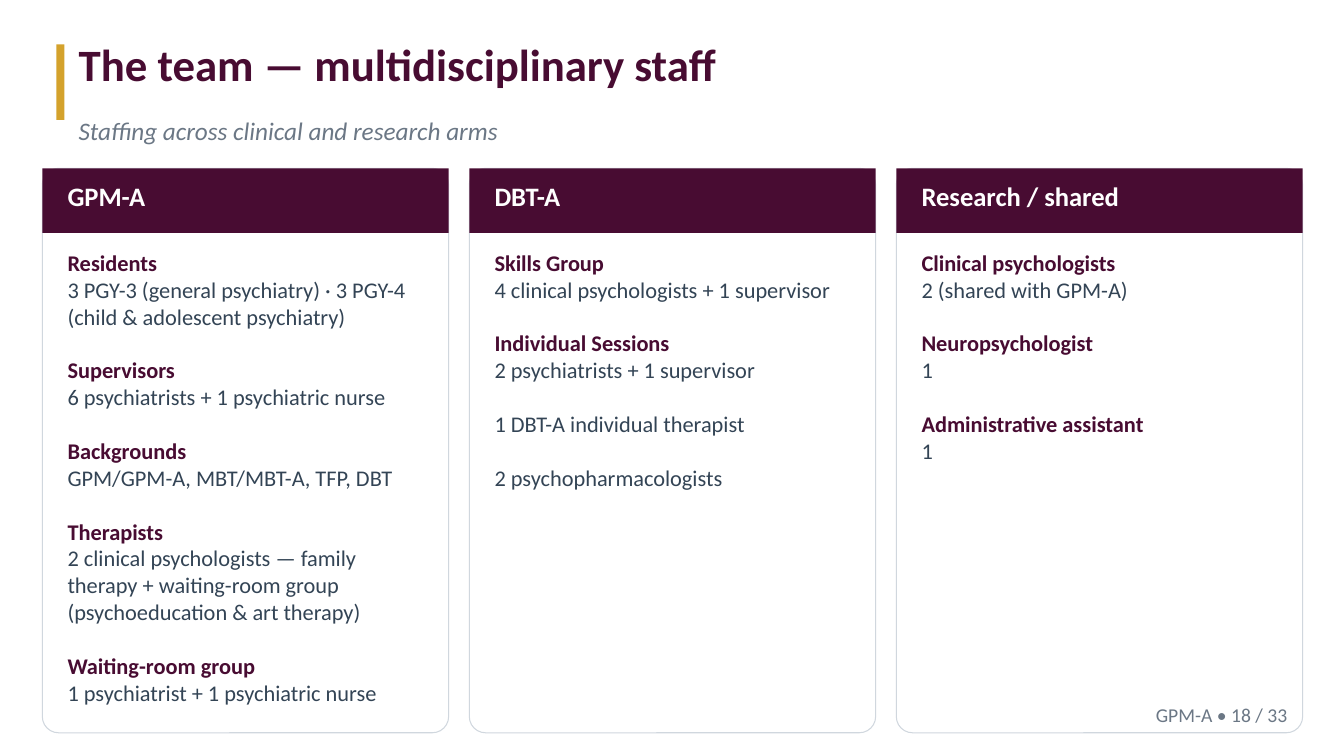
from pptx import Presentation
from pptx import util as u
from pptx.dml.color import RGBColor
from pptx.enum import shapes, text

PLUM = RGBColor(0x48, 0x0C, 0x32)
GOLD = RGBColor(0xD4, 0xA2, 0x2C)
GRAY = RGBColor(0x6B, 0x77, 0x85)
SLATE = RGBColor(0x33, 0x44, 0x55)
RULE = RGBColor(0xD0, 0xD7, 0xDE)
WHITE = RGBColor(0xFF, 0xFF, 0xFF)

WIDE, HIGH = 13.33, 7.5
SIDE, TOP = 0.42, 1.67
CARD, TALL, GAP = 4.03, 5.6, 0.205
PAD, BAND = 0.25, 0.64

TEAMS = [
    ("GPM-A", [
        ("Residents", "3 PGY-3 (general psychiatry) · 3 PGY-4 (child & adolescent psychiatry)"),
        ("Supervisors", "6 psychiatrists + 1 psychiatric nurse"),
        ("Backgrounds", "GPM/GPM-A, MBT/MBT-A, TFP, DBT"),
        ("Therapists", "2 clinical psychologists — family therapy + waiting-room group "
                       "(psychoeducation & art therapy)"),
        ("Waiting-room group", "1 psychiatrist + 1 psychiatric nurse"),
    ]),
    ("DBT-A", [
        ("Skills Group", "4 clinical psychologists + 1 supervisor"),
        ("Individual Sessions", "2 psychiatrists + 1 supervisor"),
        (None, "1 DBT-A individual therapist"),
        (None, "2 psychopharmacologists"),
    ]),
    ("Research / shared", [
        ("Clinical psychologists", "2 (shared with GPM-A)"),
        ("Neuropsychologist", "1"),
        ("Administrative assistant", "1"),
    ]),
]


def block(slide, box, fill, kind=shapes.MSO_SHAPE.RECTANGLE, line=None):
    shape = slide.shapes.add_shape(kind, *map(u.Inches, box))
    shape.shadow.inherit = False
    shape.fill.solid()
    shape.fill.fore_color.rgb = fill
    if line is None:
        shape.line.fill.background()
    else:
        shape.line.color.rgb = line
        shape.line.width = u.Pt(0.75)
    return shape


def frame(slide, box):
    area = slide.shapes.add_textbox(*map(u.Inches, box)).text_frame
    area.word_wrap = True
    area.margin_left = area.margin_right = 0
    area.margin_top = area.margin_bottom = 0
    return area


def style(par, size, color, bold=False, slant=False):
    for run in par.runs:
        font = run.font
        font.name, font.size = "Calibri", u.Pt(size)
        font.bold, font.italic = bold, slant
        font.color.rgb = color


def label(slide, box, words, size, color, bold=False, slant=False):
    area = frame(slide, box)
    area.text = words
    par = area.paragraphs[0]
    style(par, size, color, bold, slant)
    return par


def header(slide, box):
    left, top, width, height = box
    block(slide, (left, top + 0.08, 0.08, 0.75), GOLD)
    inset = left + 0.22
    label(slide, (inset, top, width, 0.78),
          "The team — multidisciplinary staff", 32, PLUM, bold=True)
    label(slide, (inset, top + 0.78, width, height - 0.78),
          "Staffing across clinical and research arms", 18, GRAY, slant=True)


def roster(slide, box, roles):
    area = frame(slide, box)
    first = True
    for role, staff in roles:
        lead = True
        for words, color, bold in ((role, PLUM, True), (staff, SLATE, False)):
            if words is None:
                continue
            par = area.paragraphs[0] if first else area.add_paragraph()
            par.text = words
            style(par, 16, color, bold)
            if lead and not first:
                par.space_before = u.Pt(19.2)
            first = lead = False


def card(slide, box, name, roles):
    left, top, width, height = box
    panel = block(slide, box, WHITE, shapes.MSO_SHAPE.ROUNDED_RECTANGLE, RULE)
    panel.adjustments[0] = 0.04
    block(slide, (left, top, width, BAND), PLUM)
    inner = width - 2 * PAD
    label(slide, (left + PAD, top + 0.11, inner, 0.42), name, 19, WHITE, bold=True)
    roster(slide, (left + PAD, top + 0.8, inner, height - 1.02), roles)


def footer(slide, box):
    par = label(slide, box, "GPM-A • 18 / 33", 14, GRAY)
    par.alignment = text.PP_ALIGN.RIGHT


def main():
    deck = Presentation()
    deck.slide_width, deck.slide_height = u.Inches(WIDE), u.Inches(HIGH)
    slide = deck.slides.add_slide(deck.slide_layouts[6])
    header(slide, (0.56, 0.36, 12, 1.2))
    for col, (name, roles) in enumerate(TEAMS):
        card(slide, (SIDE + col * (CARD + GAP), TOP, CARD, TALL), name, roles)
    footer(slide, (10.69, 6.97, 2.08, 0.24))
    deck.save("out.pptx")


if __name__ == "__main__":
    main()
